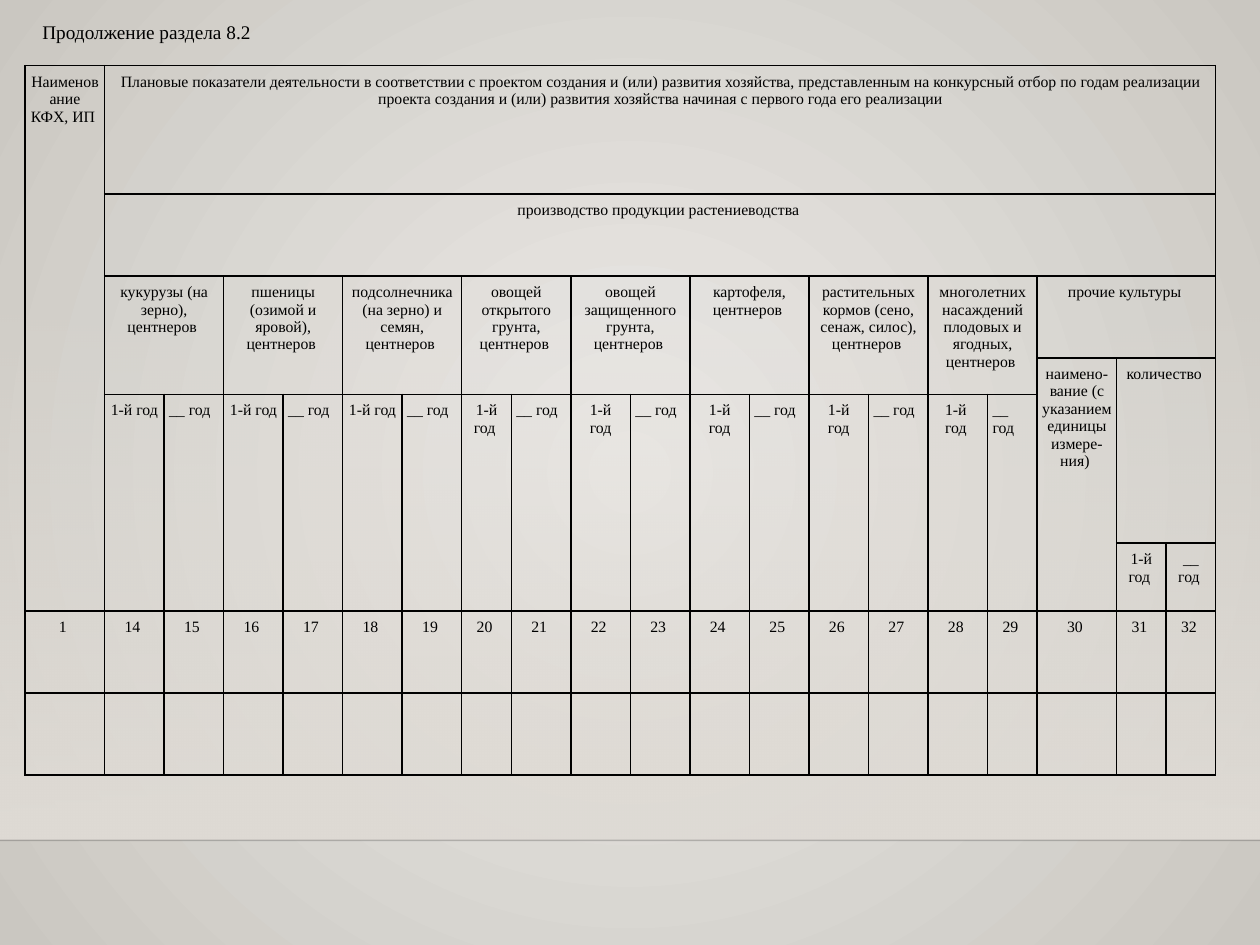
"""Build the slide with the crop production table that continues section 8.2."""
from lxml.etree import SubElement
from pptx import Presentation
from pptx.dml.color import RGBColor
from pptx.enum.shapes import MSO_CONNECTOR as Connector, MSO_SHAPE as Shape
from pptx.enum.text import MSO_ANCHOR as Anchor, PP_ALIGN as Align
from pptx.oxml.ns import qn
from pptx.util import Inches, Pt

FONT = "Times New Roman"
COLORS = {"ink": "000000", "center": "ECEAE7", "edge": "CAC7C1", "floor": "DFDBD5", "rule": "000001"}


def write(frame, lines, size, align):
    for index, line in enumerate(lines):
        para = frame.paragraphs[0] if index == 0 else frame.add_paragraph()
        para.alignment = align
        para.font.size = Pt(size)
        span = para.add_run()
        span.text = line
        span.font.name = FONT
        span.font.size = Pt(size)
        span.font.bold = False
        span.font.color.rgb = RGBColor.from_string(COLORS["ink"])


def fill_gradient(fill, names):
    fill.gradient()
    fill.gradient_angle = 270
    for stop, name in zip(fill.gradient_stops, names):
        stop.color.rgb = RGBColor.from_string(COLORS[name])


deck = Presentation()
deck.slide_width, deck.slide_height = Inches(10), Inches(7.5)
page = deck.slides.add_slide(deck.slide_layouts[5])

fill_gradient(page.background.fill, ["center", "edge"])
gradient = next(page._element.iter(qn("a:gradFill")))
gradient.remove(gradient.find(qn("a:lin")))
radial = SubElement(gradient, qn("a:path"), path="circle")
SubElement(radial, qn("a:fillToRect"), l="50000", t="50000", r="50000", b="50000")

band = page.shapes.add_shape(Shape.RECTANGLE, Inches(0), Inches(2.2), Inches(10), Inches(4.46))
band.shadow.inherit = False
band.line.fill.background()
fill_gradient(band.fill, ["floor", "floor"])
for color, alpha in zip(band._element.spPr.iter(qn("a:srgbClr")), ["0", "100000"]):
    SubElement(color, qn("a:alpha"), val=alpha)

rule = page.shapes.add_connector(Connector.STRAIGHT, Inches(0), Inches(6.67), Inches(10), Inches(6.67))
rule.line.width = Pt(1)
rule.line.color.rgb = RGBColor.from_string(COLORS["rule"])
SubElement(next(rule._element.spPr.iter(qn("a:srgbClr"))), qn("a:alpha"), val="20000")
SubElement(rule._element.spPr, qn("a:effectLst"))

title = page.shapes.title
title.left, title.top, title.width, title.height = Inches(0.12), Inches(0.11), Inches(1.97), Inches(0.29)
title.text_frame.word_wrap = False
title.text_frame.vertical_anchor = Anchor.MIDDLE
write(title.text_frame, ["Продолжение раздела 8.2"], 11, Align.RIGHT)

column_units = [8] + [6] * 6 + [5] + [6] * 8 + [5, 8, 5, 5]
row_heights = [1.02, 0.65, 0.65, 0.29, 1.18, 0.54, 0.65, 0.65]
table = page.shapes.add_table(len(row_heights), len(column_units), Inches(0.2), Inches(0.52),
                              Inches(9.45), Inches(sum(row_heights))).table
table.first_row = table.horz_banding = False
for column, units in zip(table.columns, column_units):
    column.width = Inches(9.45 * units / sum(column_units))
for row, height in zip(table.rows, row_heights):
    row.height = Inches(height)

for cell in table.iter_cells():
    cell.margin_left = cell.margin_right = Inches(0.04)
    cell.margin_top = cell.margin_bottom = Inches(0.06)
    cell.text_frame.paragraphs[0].font.size = Pt(9)
    properties = cell._tc.get_or_add_tcPr()
    for side in ["a:lnL", "a:lnR", "a:lnT", "a:lnB"]:
        border = SubElement(properties, qn(side), w=str(Pt(1)))
        SubElement(SubElement(border, qn("a:solidFill")), qn("a:srgbClr"), val=COLORS["ink"])
    cell.fill.background()

crops = [
    "кукурузы (на зерно), центнеров ",
    "пшеницы (озимой и яровой), центнеров ",
    "подсолнечника (на зерно) и семян, центнеров ",
    "овощей открытого грунта, центнеров ",
    "овощей защищенного грунта, центнеров ",
    "картофеля, центнеров ",
    "растительных кормов (сено, сенаж, силос), центнеров ",
    "многолетних насаждений плодовых и ягодных, центнеров ",
]
first_years = [["1-й год "]] * 4 + [["1-й", " год "]] * 3 + [["1-й ", "год "]]

entries = [
    (0, 0, 6, 1, ["Наименование КФХ, ИП "], Align.CENTER),
    (0, 1, 1, 19, ["Плановые показатели деятельности в соответствии с проектом создания и (или) развития "
                   "хозяйства, представленным на конкурсный отбор по годам реализации проекта создания "
                   "и (или) развития хозяйства начиная с первого года его реализации"], Align.CENTER),
    (1, 1, 1, 19, ["производство продукции растениеводства "], Align.CENTER),
    (2, 17, 1, 3, ["прочие культуры "], Align.CENTER),
    (3, 17, 3, 1, ["наимено-вание (с указанием единицы измере-", "ния) "], Align.CENTER),
    (3, 18, 2, 2, ["количество "], Align.CENTER),
    (5, 18, 1, 1, ["1-й год "], Align.CENTER),
    (5, 19, 1, 1, ["__ год "], Align.CENTER),
]
for index, (crop, first_year) in enumerate(zip(crops, first_years)):
    left = 1 + 2 * index
    entries += [
        (2, left, 2, 2, [crop], Align.CENTER),
        (4, left, 2, 1, first_year, Align.CENTER),
        (4, left + 1, 2, 1, ["__ год"], Align.LEFT),
    ]
for index, number in enumerate([1, *range(14, 33)]):
    entries.append((6, index, 1, 1, [f"{number} "], Align.CENTER))

for top, left, height, width, lines, align in entries:
    cell = table.cell(top, left)
    if height * width > 1:
        cell.merge(table.cell(top + height - 1, left + width - 1))
    write(cell.text_frame, lines, 9, align)

deck.save("out.pptx")
